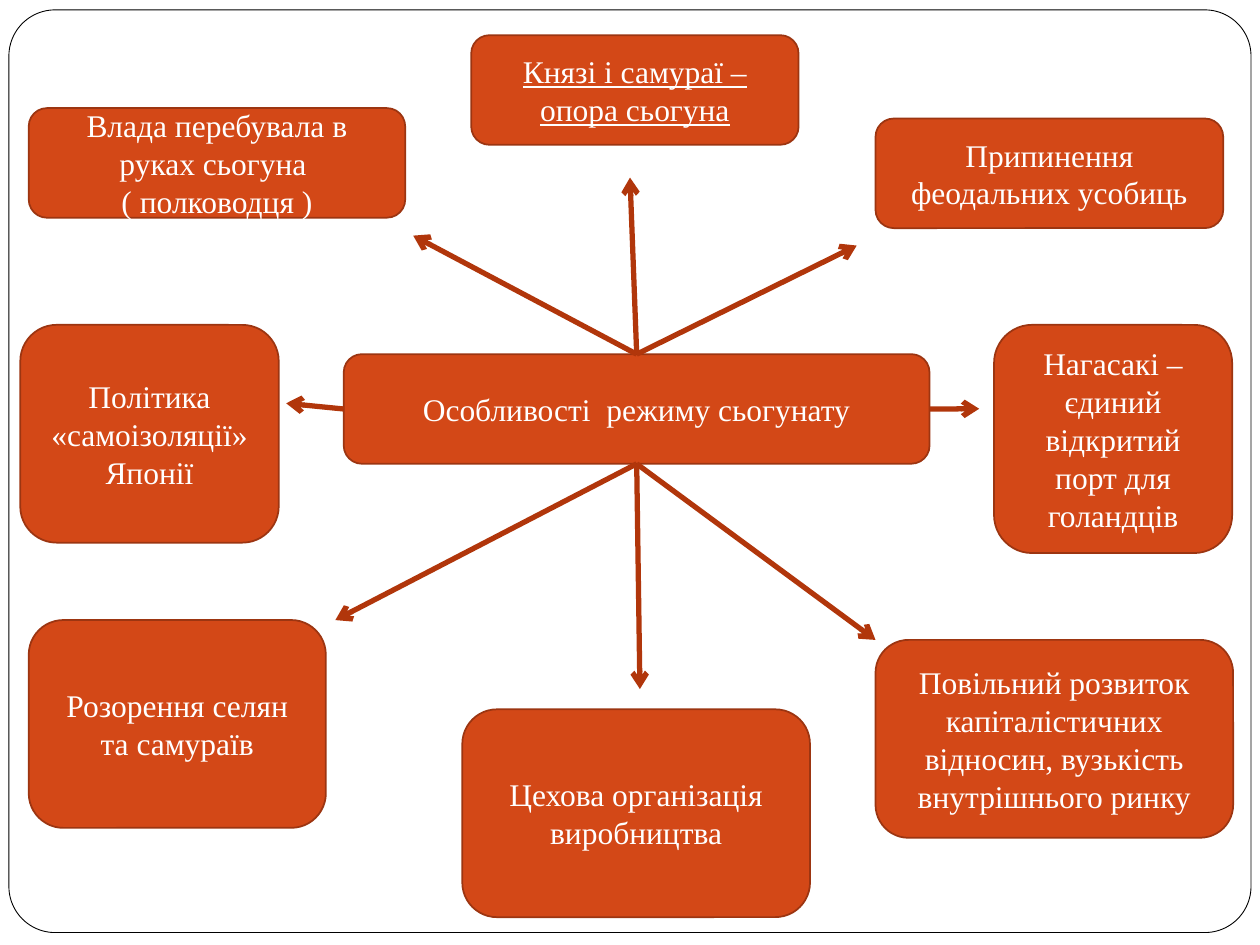
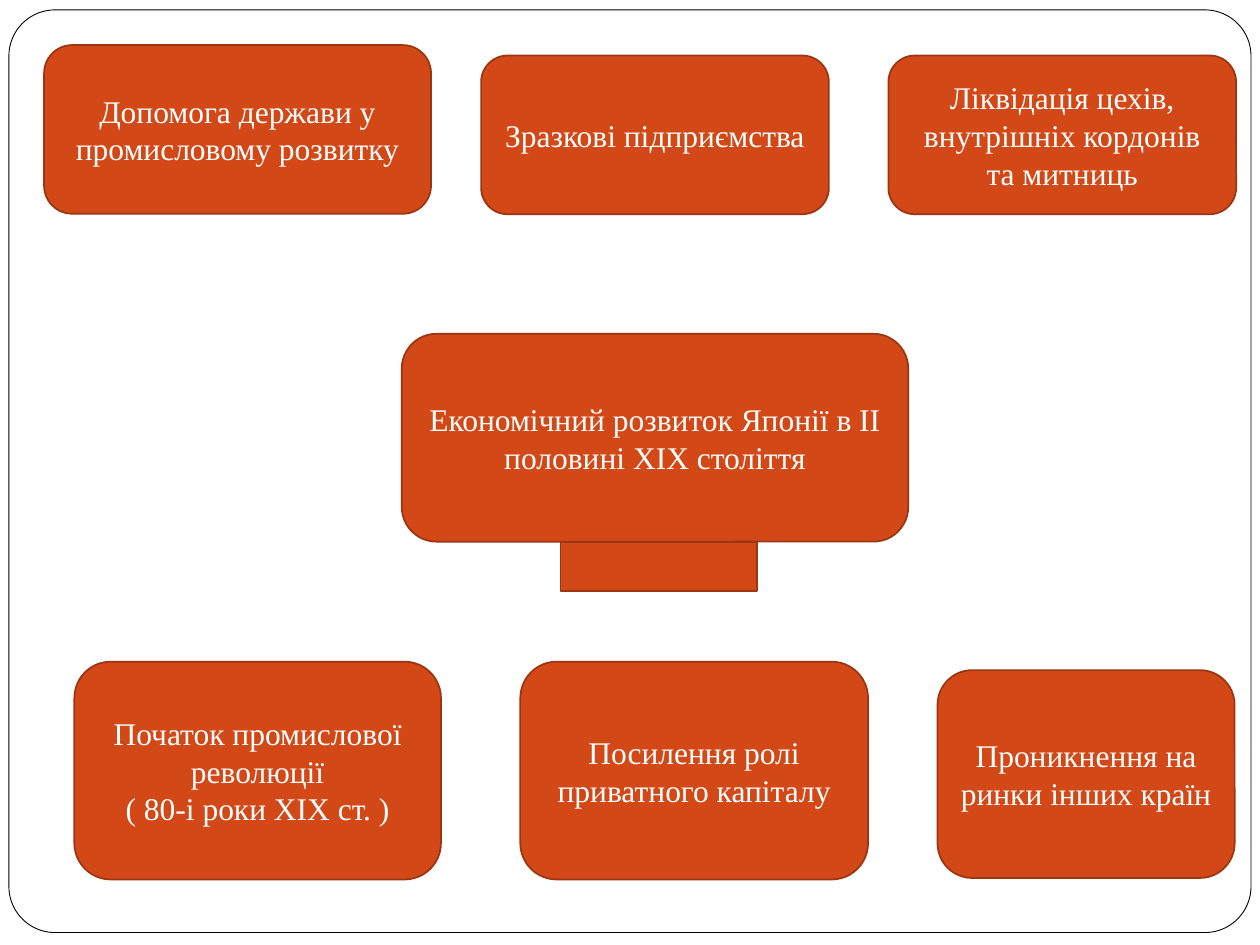
from dataclasses import dataclass
from lxml.etree import SubElement
from pptx import Presentation
from pptx.dml.color import RGBColor
from pptx.enum.shapes import MSO_CONNECTOR, MSO_SHAPE
from pptx.enum.text import MSO_ANCHOR, PP_ALIGN
from pptx.oxml.ns import qn
from pptx.util import Cm, Pt


@dataclass(frozen=True)
class Theme:
    paper: str = "FFFFFF"
    ink: str = "000000"
    fill: str = "D34817"
    edge: str = "9C3511"
    arrow: str = "B1360B"
    text: str = "FFFFFF"
    font: str = "Times New Roman"
    size: float = 18
    thin: float = 0.5
    line: float = 1
    bold: float = 3


THEME = Theme()
WIDTH, HEIGHT = 25.4, 19.05
FRAME = (0.18, 0.2, 25.04, 18.6)
TOP, LEFT, BASE, RIGHT = range(4)  # connection sites of the hub

# Content: boxes are (text, (left, top, width, height)) in cm;
# rays are (hub site, tip)
REGIME = {
    "hub": ("Особливості  режиму сьогунату", (6.93, 7.14, 11.81, 2.21)),
    "boxes": [
        ("Влада перебувала в руках сьогуна \n( полководця )", (0.58, 2.18, 7.59, 2.21)),
        ("Припинення феодальних усобиць", (17.65, 2.39, 7.01, 2.21)),
        ("Політика «самоізоляції» Японії", (0.41, 6.55, 5.21, 4.39)),
        ("Нагасакі – єдиний відкритий порт для голандців", (20.04, 6.55, 4.8, 4.6)),
        ("Розорення селян та самураїв", (0.58, 12.5, 5.99, 4.19)),
        ("Цехова організація виробництва", (9.32, 14.3, 7.01, 4.19)),
        ("Повільний розвиток капіталістичних відносин, вузькість внутрішнього ринку",
         (17.65, 12.9, 7.21, 3.99)),
    ],
    "marked": [("Князі і самураї – опора сьогуна", (9.5, 0.71, 6.6, 2.21))],
    "rays": [
        (TOP, (8.33, 4.75)), (TOP, (17.27, 4.95)), (TOP, (12.7, 3.58)),
        (RIGHT, (19.74, 8.24)), (LEFT, (5.77, 8.13)),
        (BASE, (6.76, 12.5)), (BASE, (17.65, 12.9)), (BASE, (12.9, 13.89)),
    ],
}
GROWTH = {
    "hub": ("Економічний розвиток Японії в ІІ половині ХІХ століття",
            (8.1, 6.73, 10.21, 4.19)),
    "boxes": [
        ("Допомога держави у промисловому розвитку", (0.89, 0.91, 7.8, 3.4)),
        ("Зразкові підприємства", (9.7, 1.12, 7.01, 3.2)),
        ("Ліквідація цехів, внутрішніх кордонів та митниць", (17.91, 1.12, 7.01, 3.2)),
        ("Початок промислової революції\n( 80-і роки ХІХ ст. )", (1.5, 13.34, 7.39, 4.39)),
        ("Посилення ролі приватного капіталу", (10.49, 13.34, 7.01, 4.39)),
        ("Проникнення на ринки інших країн", (18.9, 13.51, 5.99, 4.19)),
    ],
    "foot": (11.3, 10.92, 3.96, 0.99),
}


def color(code):
    return RGBColor.from_string(code)


def write(shape, text, size=THEME.size, ink=THEME.text, under=None):
    frame = shape.text_frame
    frame.word_wrap = True
    frame.vertical_anchor = MSO_ANCHOR.MIDDLE
    frame.text = text
    for para in frame.paragraphs:
        para.alignment = PP_ALIGN.CENTER
        for run in para.runs:
            run.font.name = THEME.font
            run.font.size = Pt(size)
            run.font.color.rgb = color(ink)
            run.font.underline = under


def panel(slide, place, kind=MSO_SHAPE.ROUNDED_RECTANGLE,
          fill=THEME.fill, edge=THEME.edge, line=THEME.line):
    shape = slide.shapes.add_shape(kind, *map(Cm, place))
    shape.shadow.inherit = False
    shape.fill.solid()
    shape.fill.fore_color.rgb = color(fill)
    shape.line.color.rgb = color(edge)
    shape.line.width = Pt(line)
    return shape


def card(slide, text, place, **style):
    shape = panel(slide, place)
    write(shape, text, **style)
    return shape


def ray(slide, hub, site, tip):
    end = [Cm(part) for part in tip]
    line = slide.shapes.add_connector(MSO_CONNECTOR.STRAIGHT, *end, *end)
    line.begin_connect(hub, site)
    line.line.color.rgb = color(THEME.arrow)
    line.line.width = Pt(THEME.bold)
    props = line.element.spPr
    SubElement(props.find(qn("a:ln")), qn("a:tailEnd"), type="arrow")
    SubElement(props, qn("a:effectLst"))


def border(deck, slide):
    """Place the shared page frame behind everything on the master."""
    shape = panel(slide, FRAME, fill=THEME.paper, edge=THEME.ink, line=THEME.thin)
    shape.adjustments[0] = 0.05
    deck.slide_master.shapes.element.insert(2, shape.element)


def draw(slide, data):
    hub = card(slide, *data["hub"])
    for text, place in data["boxes"]:
        card(slide, text, place)
    for text, place in data.get("marked", []):
        card(slide, text, place, under=True)
    for site, tip in data.get("rays", []):
        ray(slide, hub, site, tip)
    if "foot" in data:
        panel(slide, data["foot"], kind=MSO_SHAPE.RECTANGLE)


def main():
    deck = Presentation()
    deck.slide_width, deck.slide_height = Cm(WIDTH), Cm(HEIGHT)
    blank = deck.slide_layouts.get_by_name("Blank")
    slides = [deck.slides.add_slide(blank) for _ in range(2)]
    border(deck, slides[0])
    for slide, data in zip(slides, (REGIME, GROWTH)):
        draw(slide, data)
    deck.save("out.pptx")


if __name__ == "__main__":
    main()
